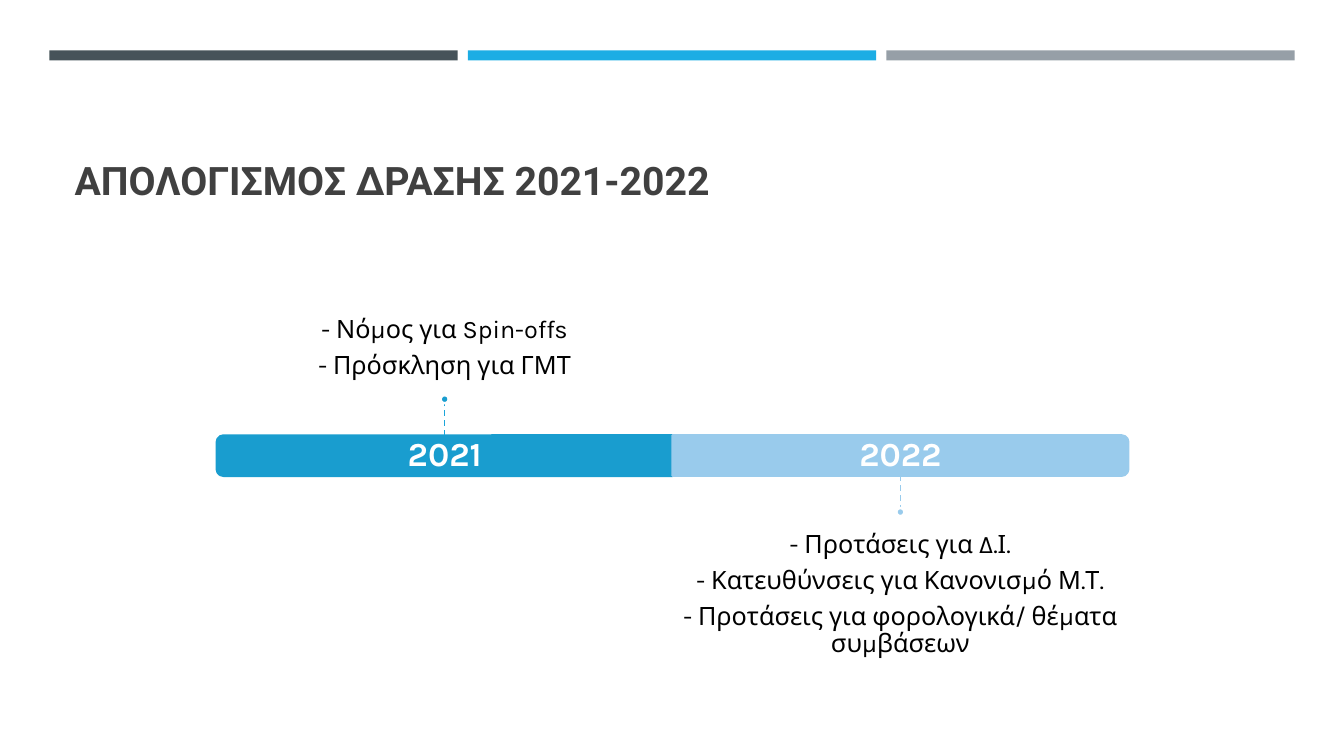
"""Build the 2021-2022 activity review timeline slide."""
from lxml import etree
from pptx import Presentation
from pptx.dml.color import RGBColor
from pptx.enum.dml import MSO_LINE
from pptx.enum.shapes import MSO_CONNECTOR, MSO_SHAPE
from pptx.enum.text import MSO_ANCHOR, PP_ALIGN
from pptx.oxml.ns import qn
from pptx.util import Inches, Pt

TITLE = "ΑΠΟΛΟΓΙΣΜΟΣ ΔΡΑΣΗΣ 2021-2022"
HEADER_COLORS = ["465359", "1CADE4", "969FA7"]
PERIODS = [
    {"year": "2021", "fill": "199DCF", "dash": "1BA5DA", "above": True,
     "notes": ["- Νόμος για Spin-offs", "- Πρόσκληση για ΓΜΤ"]},
    {"year": "2022", "fill": "99CBEC", "dash": "98CBEC", "above": False,
     "notes": ["- Προτάσεις για Δ.Ι.", "- Κατευθύνσεις για Κανονισμό Μ.Τ.",
               "- Προτάσεις για φορολογικά/ θέματα συμβάσεων"]},
]
TIMELINE_LEFT, BAR_WIDTH, BAR_HEIGHT, BAR_MIDDLE = 2.15, 4.52, 0.4, 4.52
STEM_START, STEM_END, DOT_SIZE = 0.2, 0.52, 0.08
NOTES_GAP, NOTES_HEIGHT, NOTES_INSET = 0.6, 1.39, 0.15


def color(value):
    return RGBColor.from_string(value)


def write(shape, lines, size=18, font="Karla", fill="000000", bold=False,
          align=PP_ALIGN.CENTER, anchor=MSO_ANCHOR.MIDDLE, insets=(0, 0, 0, 0),
          spacing=0.9, after=0):
    frame = shape.text_frame
    frame.word_wrap = True
    frame.vertical_anchor = anchor
    (frame.margin_left, frame.margin_top,
     frame.margin_right, frame.margin_bottom) = map(Inches, insets)
    for index, line in enumerate(lines):
        paragraph = frame.paragraphs[0] if index == 0 else frame.add_paragraph()
        paragraph.alignment = align
        paragraph.line_spacing = spacing
        paragraph.space_before = Pt(0)
        paragraph.space_after = Pt(after)
        run = paragraph.add_run()
        run.text = line
        run.font.size = Pt(size)
        run.font.name = font
        run.font.bold = bold
        run.font.color.rgb = color(fill)


def add_block(slide, kind, left, top, width, height, fill, line=None):
    shape = slide.shapes.add_shape(kind, *map(Inches, (left, top, width, height)))
    shape.shadow.inherit = False
    shape.fill.solid()
    shape.fill.fore_color.rgb = color(fill)
    if line:
        shape.line.color.rgb = color(line)
        shape.line.width = Pt(1.75)
    else:
        shape.line.fill.background()
    return shape


def add_text(slide, left, top, width, height, lines, **style):
    box = slide.shapes.add_textbox(*map(Inches, (left, top, width, height)))
    write(box, lines, **style)


def add_stem(slide, x, start, end, stroke):
    stem = slide.shapes.add_connector(
        MSO_CONNECTOR.STRAIGHT, *map(Inches, (x, start, x, end)))
    stem.line.color.rgb = color(stroke)
    stem.line.width = Pt(1)
    stem.line.dash_style = MSO_LINE.DASH
    etree.SubElement(stem._element.spPr, qn("a:effectLst"))


def add_period(slide, index, period):
    left = TIMELINE_LEFT + index * BAR_WIDTH
    center = left + BAR_WIDTH / 2
    above = period["above"]
    direction = -1 if above else 1

    bar = add_block(slide, MSO_SHAPE.ROUND_2_SAME_RECTANGLE,
                    center - BAR_HEIGHT / 2, BAR_MIDDLE - BAR_WIDTH / 2,
                    BAR_HEIGHT, BAR_WIDTH, period["fill"], period["fill"])
    bar.rotation = 90 if index else 270
    add_text(slide, left, BAR_MIDDLE - 0.18, BAR_WIDTH, 0.36,
             [period["year"]], size=24, fill="FFFFFF", bold=True)

    notes_top = BAR_MIDDLE + direction * NOTES_GAP - (NOTES_HEIGHT if above else 0)
    add_text(slide, left, notes_top, BAR_WIDTH, NOTES_HEIGHT, period["notes"],
             anchor=MSO_ANCHOR.BOTTOM if above else MSO_ANCHOR.TOP,
             insets=(0, 0, 0, NOTES_INSET) if above else (0, NOTES_INSET, 0, 0),
             after=6.3)

    add_stem(slide, center, BAR_MIDDLE + direction * STEM_START,
             BAR_MIDDLE + direction * STEM_END, period["dash"])
    dot_middle = BAR_MIDDLE + direction * (STEM_END + DOT_SIZE / 2)
    add_block(slide, MSO_SHAPE.OVAL, center - DOT_SIZE / 2,
              dot_middle - DOT_SIZE / 2, DOT_SIZE, DOT_SIZE,
              period["fill"], "FFFFFF")


def main():
    presentation = Presentation()
    presentation.slide_width = Inches(13.33)
    presentation.slide_height = Inches(7.5)
    slide = presentation.slides.add_slide(presentation.slide_layouts[5])

    for index, fill in enumerate(HEADER_COLORS):
        add_block(slide, MSO_SHAPE.RECTANGLE, 0.49 + index * 4.15, 0.5, 4.05, 0.1, fill)

    title = slide.shapes.title
    title.left, title.top, title.width, title.height = map(
        Inches, (0.64, 0.77, 12.06, 1.3))
    write(title, [TITLE], size=28, font="Roboto", fill="404040", bold=True,
          align=PP_ALIGN.LEFT, anchor=MSO_ANCHOR.BOTTOM,
          insets=(0.1, 0.05, 0.1, 0.05))

    for index, period in enumerate(PERIODS):
        add_period(slide, index, period)

    presentation.save("out.pptx")


if __name__ == "__main__":
    main()
